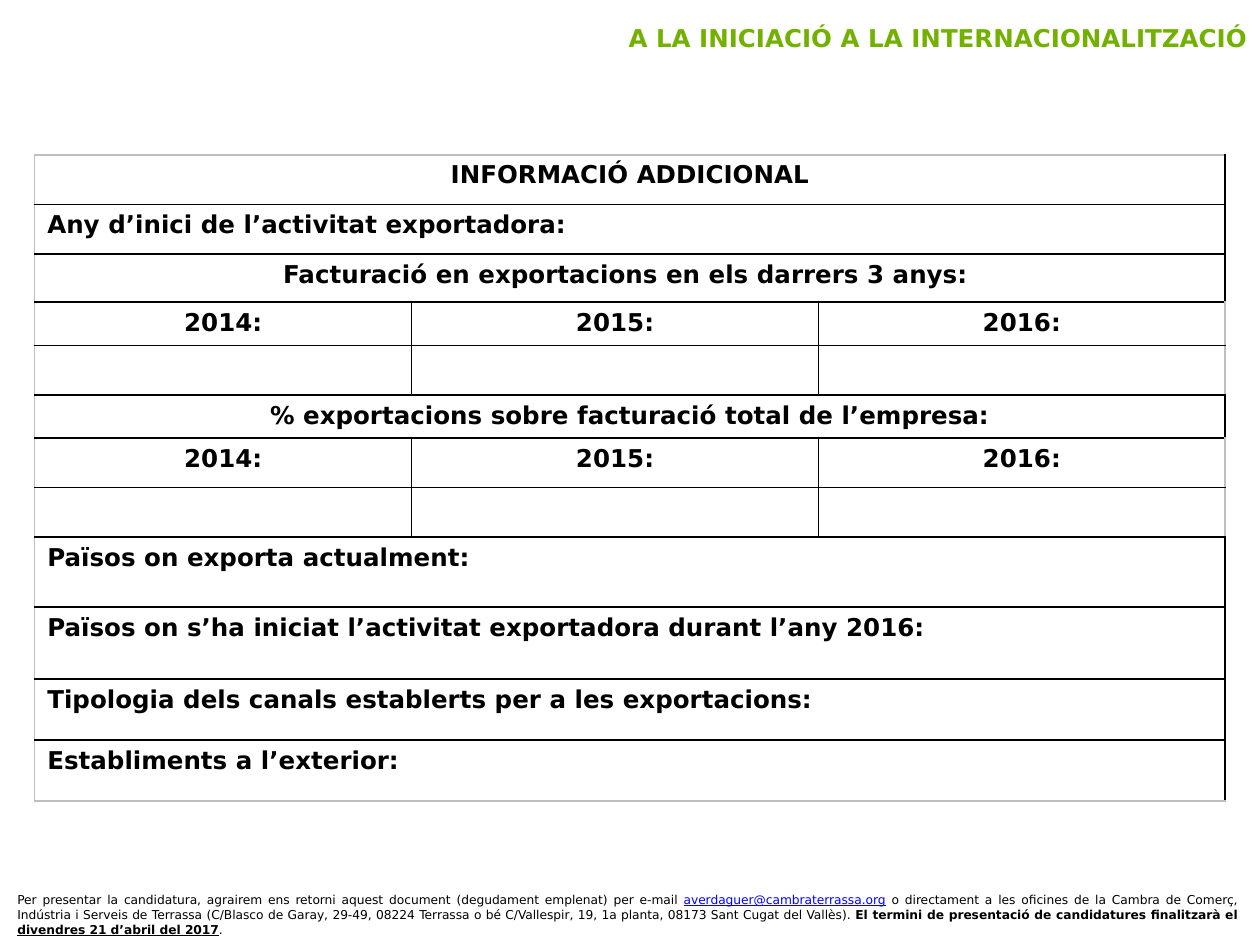
from lxml import etree
from pptx import Presentation
from pptx.dml.color import RGBColor
from pptx.enum.shapes import MSO_SHAPE
from pptx.enum.text import MSO_ANCHOR, PP_ALIGN
from pptx.oxml.ns import qn
from pptx.util import Cm, Pt

FONT = "DejaVu Sans"
GREEN = RGBColor(0x72, 0xB1, 0x00)
BLACK = RGBColor(0x00, 0x00, 0x00)
WHITE = RGBColor(0xFF, 0xFF, 0xFF)
LINK_BLUE = RGBColor(0x00, 0x00, 0xFF)
FRAME_GREY = RGBColor(0xBF, 0xBF, 0xBF)
LEFT, CENTER, RIGHT, JUSTIFY = PP_ALIGN.LEFT, PP_ALIGN.CENTER, PP_ALIGN.RIGHT, PP_ALIGN.JUSTIFY
MIDDLE = MSO_ANCHOR.MIDDLE
RECTANGLE = MSO_SHAPE.RECTANGLE

COLUMN_WIDTHS = (7.6, 8.2, 8.2)
YEARS = ("2014:", "2015:", "2016:")
EMPTY = ("", "", "")
# Row height in cm, alignment, texts; a single text spans the whole row.
FORM_ROWS = (
    (1, CENTER, ("INFORMACIÓ ADDICIONAL",)),
    (1, LEFT, ("Any d’inici de l’activitat exportadora:",)),
    (0.97, CENTER, ("Facturació en exportacions en els darrers 3 anys: ",)),
    (0.87, CENTER, YEARS),
    (1, CENTER, EMPTY),
    (0.87, CENTER, ("% exportacions sobre facturació total de l’empresa:",)),
    (1, CENTER, YEARS),
    (1, CENTER, EMPTY),
    (1.41, LEFT, ("Països on exporta actualment:",)),
    (1.45, LEFT, ("Països on s’ha iniciat l’activitat exportadora durant l’any 2016:",)),
    (1.23, LEFT, ("Tipologia dels canals establerts per a les exportacions:",)),
    (1.23, LEFT, ("Establiments a l’exterior:",)),
)


def add_run(paragraph, text, size, color=BLACK, bold=False, underline=False):
    run = paragraph.add_run()
    run.text = text
    font = run.font
    font.name, font.size, font.bold, font.underline = FONT, Pt(size), bold, underline
    font.color.rgb = color


def add_heading(slide):
    box = slide.shapes.add_textbox(Cm(7.11), Cm(0.33), Cm(18.29), Cm(0.86))
    box.text_frame.word_wrap = True
    paragraph = box.text_frame.paragraphs[0]
    paragraph.alignment = RIGHT
    add_run(paragraph, "A LA INICIACIÓ A LA INTERNACIONALITZACIÓ", 14, GREEN, bold=True)


def add_footer(slide):
    shape = slide.shapes.add_shape(RECTANGLE, Cm(0.1), Cm(17.93), Cm(25.1), Cm(1.02))
    shape.shadow.inherit = False
    shape.fill.solid()
    shape.fill.fore_color.rgb = WHITE
    shape.line.color.rgb = WHITE
    shape.line.width = Pt(0.75)
    shape.text_frame.word_wrap = True
    shape.text_frame.vertical_anchor = MIDDLE
    paragraph = shape.text_frame.paragraphs[0]
    paragraph.alignment = JUSTIFY
    paragraph.space_after = Pt(10)
    add_run(paragraph, "Per presentar la candidatura, agrairem ens retorni aquest document "
            "(degudament emplenat) per e-mail ", 7)
    add_run(paragraph, "averdaguer@cambraterrassa.org", 7, LINK_BLUE, underline=True)
    add_run(paragraph, " o directament a les oficines de la Cambra de Comerç, Indústria i "
            "Serveis de Terrassa (C/Blasco de Garay, 29-49, 08224 Terrassa o bé "
            "C/Vallespir, 19, 1a planta, 08173 Sant Cugat del Vallès). ", 7)
    add_run(paragraph, "El termini de presentació de candidatures finalitzarà el ", 7, bold=True)
    add_run(paragraph, "divendres 21 d’abril del 2017", 7, bold=True, underline=True)
    add_run(paragraph, ".", 7)


def set_borders(cell, colors):
    """Draw the left, right, top and bottom borders, which precede the fill in the XML."""
    properties = cell._tc.get_or_add_tcPr()
    for index, (side, color) in enumerate(zip("LRTB", colors)):
        line = etree.Element(qn(f"a:ln{side}"), w=str(Pt(1)))
        fill = etree.SubElement(line, qn("a:solidFill"))
        etree.SubElement(fill, qn("a:srgbClr"), val=str(color))
        properties.insert(index, line)


def add_form(slide):
    row_count, column_count = len(FORM_ROWS), len(COLUMN_WIDTHS)
    height = sum(row[0] for row in FORM_ROWS)
    table = slide.shapes.add_table(row_count, column_count, Cm(0.7), Cm(3.12),
                                   Cm(sum(COLUMN_WIDTHS)), Cm(height)).table
    table.first_row = table.horz_banding = False
    for column, width in zip(table.columns, COLUMN_WIDTHS):
        column.width = Cm(width)
    for row_index, (row_height, alignment, texts) in enumerate(FORM_ROWS):
        table.rows[row_index].height = Cm(row_height)
        for column_index in range(column_count):
            cell = table.cell(row_index, column_index)
            cell.fill.background()
            outer_sides = (column_index == 0, column_index == column_count - 1,
                           row_index == 0, row_index == row_count - 1)
            set_borders(cell, [FRAME_GREY if outer else BLACK for outer in outer_sides])
        for column_index, text in enumerate(texts):
            paragraph = table.cell(row_index, column_index).text_frame.paragraphs[0]
            paragraph.alignment = alignment
            paragraph.font.size = Pt(14)
            if text:
                add_run(paragraph, text, 14, bold=True)
        if len(texts) == 1:
            table.cell(row_index, 0).merge(table.cell(row_index, column_count - 1))


def main():
    presentation = Presentation()
    presentation.slide_width, presentation.slide_height = Cm(25.4), Cm(19.05)
    slide = presentation.slides.add_slide(presentation.slide_layouts[6])
    add_heading(slide)
    add_footer(slide)
    add_form(slide)
    presentation.save("out.pptx")


if __name__ == "__main__":
    main()
